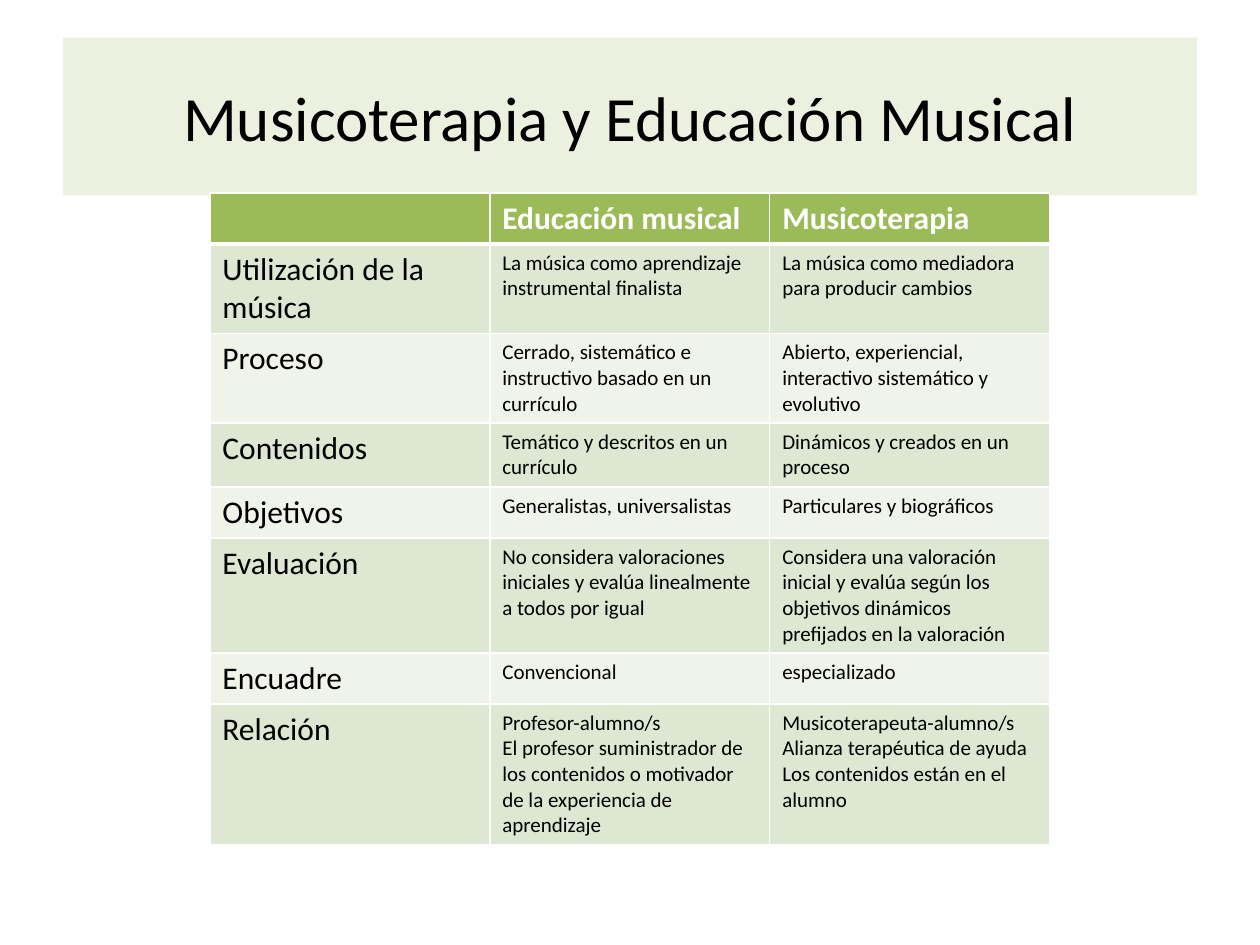
from lxml import etree
from pptx import Presentation
from pptx.dml.color import RGBColor
from pptx.enum import text
from pptx.oxml.ns import qn
from pptx.util import Cm, Pt

COLORS = {"title": "EBF1DE", "header": "9BBB59", "odd": "DEE7D1",
          "even": "EFF3EA", "dark": "000000", "light": "FFFFFF"}
FONTS = {
    "title": {"name": "Calibri", "size": Pt(36), "bold": False},
    "header": {"name": "Calibri", "size": Pt(18), "bold": True},
    "label": {"name": "Calibri", "size": Pt(18), "bold": False},
    "body": {"name": "Calibri", "size": Pt(12), "bold": False},
}
ROWS = [
    ("", "Educación musical", "Musicoterapia"),
    ("Utilización de la música",
     "La música como aprendizaje instrumental finalista",
     "La música como mediadora para producir cambios"),
    ("Proceso",
     "Cerrado, sistemático e instructivo basado en un currículo",
     "Abierto, experiencial, interactivo sistemático y evolutivo"),
    ("Contenidos",
     "Temático y descritos en un currículo",
     "Dinámicos y creados en un proceso"),
    ("Objetivos", "Generalistas, universalistas", "Particulares y biográficos"),
    ("Evaluación",
     "No considera valoraciones iniciales y evalúa linealmente a todos por igual",
     "Considera una valoración inicial y evalúa según los objetivos dinámicos "
     "prefijados en la valoración"),
    ("Encuadre", "Convencional", "especializado"),
    ("Relación",
     "Profesor-alumno/s\nEl profesor suministrador de los contenidos o motivador "
     "de la experiencia de aprendizaje",
     "Musicoterapeuta-alumno/s\nAlianza terapéutica de ayuda\n"
     "Los contenidos están en el alumno"),
]


def write(tf, content, style, color):
    tf.text = content
    for p in tf.paragraphs:
        for font in [p.font] + [r.font for r in p.runs]:
            for key, value in FONTS[style].items():
                setattr(font, key, value)
            font.color.rgb = RGBColor.from_string(COLORS[color])


def add_border(cell, side, width):
    ln = etree.SubElement(cell._tc.get_or_add_tcPr(), qn(f"a:ln{side}"), w=str(Pt(width)))
    fill = etree.SubElement(ln, qn("a:solidFill"))
    etree.SubElement(fill, qn("a:srgbClr"), val=COLORS["light"])


prs = Presentation()
prs.slide_width, prs.slide_height = Cm(25.4), Cm(19.05)
s = prs.slides.add_slide(prs.slide_layouts[5])

# Title band
sp = s.shapes.title
sp.left, sp.top, sp.width, sp.height = Cm(1.27), Cm(0.76), Cm(22.86), Cm(3.18)
sp.fill.solid()
sp.fill.fore_color.rgb = RGBColor.from_string(COLORS["title"])
write(sp.text_frame, "Musicoterapia y Educación Musical", "title", "dark")
sp.text_frame.vertical_anchor = text.MSO_ANCHOR.MIDDLE
sp.text_frame.paragraphs[0].alignment = text.PP_ALIGN.CENTER

# Comparison table
row_height = Cm(1.03)
table = s.shapes.add_table(len(ROWS), 3, Cm(4.23), Cm(3.89), Cm(16.93),
                           row_height * len(ROWS)).table
for row in table.rows:
    row.height = row_height

for i, row in enumerate(ROWS):
    band = "header" if i == 0 else "odd" if i % 2 else "even"
    for j, content in enumerate(row):
        cell = table.cell(i, j)
        # A thicker rule separates the header from the rows
        for side in "LRTB":
            thick = (i, side) in [(0, "B"), (1, "T")]
            add_border(cell, side, 3 if thick else 1)
        cell.fill.solid()
        cell.fill.fore_color.rgb = RGBColor.from_string(COLORS[band])
        style = "header" if i == 0 else "label" if j == 0 else "body"
        write(cell.text_frame, content, style, "light" if i == 0 else "dark")

prs.save("out.pptx")
